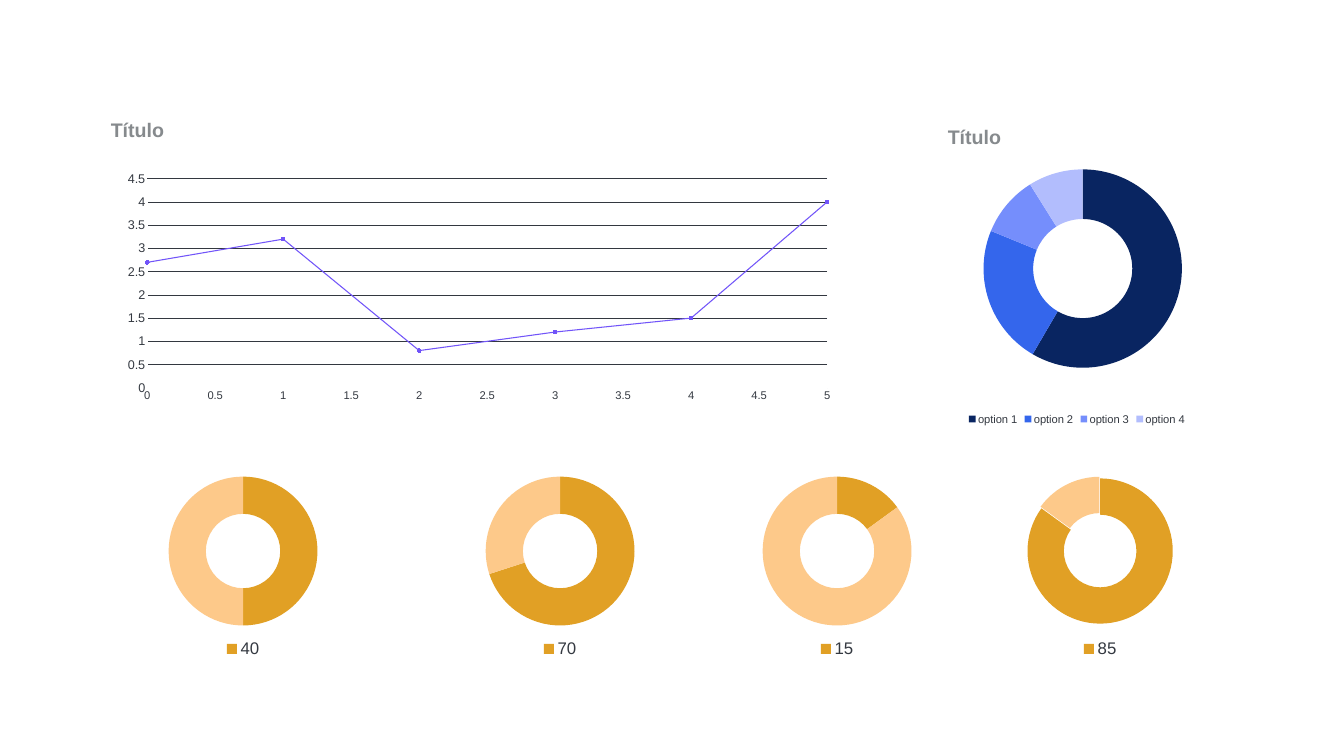
from dataclasses import dataclass

from lxml.etree import SubElement
from pptx import Presentation
from pptx.chart.data import CategoryChartData, XyChartData
from pptx.dml.color import RGBColor
from pptx.enum.chart import XL_CHART_TYPE as ChartType
from pptx.enum.chart import XL_LEGEND_POSITION as LegendPosition
from pptx.enum.chart import XL_MARKER_STYLE as MarkerStyle
from pptx.enum.chart import XL_TICK_MARK as TickMark
from pptx.enum.text import MSO_ANCHOR as Anchor
from pptx.enum.text import MSO_AUTO_SIZE as AutoSize
from pptx.enum.text import PP_ALIGN as Align
from pptx.oxml import parse_xml
from pptx.oxml.ns import nsdecls, qn
from pptx.util import Cm, Pt


@dataclass(frozen=True)
class Theme:
    font: str = "Arial"
    white: str = "FFFFFF"
    heading: str = "868A8D"
    label: str = "343941"
    grid: str = "333840"
    curve: str = "7154F9"
    blues: tuple = ("092561", "3466EC", "758EFC", "B2BDFD")
    golds: tuple = ("E1A025", "FDC98A")
    heading_size: int = 28
    gauge_size: int = 24
    value_size: int = 18
    small_size: int = 16


THEME = Theme()


def set_attributes(target, values):
    for name, value in values.items():
        setattr(target, name, value)


def format_font(font, size, color, bold=False):
    set_attributes(font, {"name": THEME.font, "size": Pt(size), "bold": bold})
    font.color.rgb = RGBColor.from_string(color)


def format_line(line, color, width=0.75):
    line.color.rgb = RGBColor.from_string(color)
    line.width = Pt(width)


def format_fill(fill, color):
    fill.solid()
    fill.fore_color.rgb = RGBColor.from_string(color)


def format_heading(shape, left, top):
    box = {"left": Cm(left), "top": Cm(top), "width": Cm(6.2), "height": Cm(1.57)}
    set_attributes(shape, box)
    frame = shape.text_frame
    frame.text = "Título"
    set_attributes(frame, {"word_wrap": True, "vertical_anchor": Anchor.MIDDLE,
                           "auto_size": AutoSize.SHAPE_TO_FIT_TEXT})
    paragraph = frame.paragraphs[0]
    set_attributes(paragraph, {"alignment": Align.JUSTIFY, "line_spacing": 1.2})
    format_font(paragraph.runs[0].font, THEME.heading_size, THEME.heading, True)


def add_chart(slide, kind, box, data):
    chart = slide.shapes.add_chart(kind, *map(Cm, box), data).chart
    set_attributes(chart, {"has_title": False, "has_legend": False})
    format_font(chart.font, THEME.value_size, THEME.label)
    return chart


def place_plot(chart, x, y, width, height):
    area = chart.element.find(".//" + qn("c:plotArea"))
    for layout in area.findall(qn("c:layout")):
        area.remove(layout)
    layout = parse_xml(f"<c:layout {nsdecls('c')}><c:manualLayout/></c:layout>")
    values = {"layoutTarget": "inner", "xMode": "edge", "yMode": "edge",
              "x": x, "y": y, "w": width, "h": height}
    for name, value in values.items():
        SubElement(layout[0], qn(f"c:{name}")).set("val", str(value))
    area.insert(0, layout)


def format_axis(axis, size, grid, maximum):
    set_attributes(axis, {"major_tick_mark": TickMark.NONE, "minor_tick_mark": TickMark.NONE,
                          "minimum_scale": 0, "maximum_scale": maximum, "major_unit": 0.5,
                          "has_major_gridlines": True})
    set_attributes(axis.tick_labels, {"number_format": "General", "number_format_is_linked": False})
    format_font(axis.tick_labels.font, size, THEME.label)
    format_line(axis.format.line, THEME.white)
    format_line(axis.major_gridlines.format.line, grid)


def add_curve(slide, box, values):
    data = XyChartData()
    points = data.add_series("Series 1")
    for x, y in enumerate(values):
        points.add_data_point(x, y)
    chart = add_chart(slide, ChartType.XY_SCATTER_SMOOTH, box, data)
    chart.plots[0].vary_by_categories = False
    place_plot(chart, 0.096, 0.097, 0.891, 0.696)
    format_axis(chart.category_axis, THEME.small_size, THEME.white, 5)
    format_axis(chart.value_axis, THEME.value_size, THEME.grid, 4.5)

    series = chart.plots[0].series[0]
    series.smooth = True
    format_line(series.format.line, THEME.curve, 1.5)
    set_attributes(series.marker, {"style": MarkerStyle.CIRCLE, "size": 5})
    format_fill(series.marker.format.fill, THEME.curve)
    format_line(series.marker.format.line, THEME.curve)


def add_doughnut(slide, box, shares, colors, legend_size):
    data = CategoryChartData()
    data.categories = list(shares)
    data.add_series("Series 1", list(shares.values()))
    chart = add_chart(slide, ChartType.DOUGHNUT, box, data)
    chart.plots[0].vary_by_categories = True
    for index, color in enumerate(colors):
        point = chart.plots[0].series[0].points[index]
        format_fill(point.format.fill, color)
        point.format.line.fill.background()
    chart.has_legend = True
    set_attributes(chart.legend, {"position": LegendPosition.BOTTOM, "include_in_layout": False})
    format_font(chart.legend.font, legend_size, THEME.label)
    return chart


def add_gauge(slide, box, label, share, explosion):
    shares = {label: share, "two": 100 - share}
    chart = add_doughnut(slide, box, shares, THEME.golds, THEME.gauge_size)
    hidden = parse_xml(f'<c:legendEntry {nsdecls("c")}><c:idx val="1"/>'
                       '<c:delete val="1"/></c:legendEntry>')
    chart.element.find(".//" + qn("c:legendPos")).addnext(hidden)
    if explosion:
        rest = chart.element.findall(".//" + qn("c:dPt"))[1]
        offset = parse_xml(f'<c:explosion {nsdecls("c")} val="{explosion}"/>')
        rest.find(qn("c:spPr")).addprevious(offset)


def main():
    presentation = Presentation()
    set_attributes(presentation, {"slide_width": Cm(67.74), "slide_height": Cm(38.1)})
    slide = presentation.slides.add_slide(presentation.slide_layouts[5])

    add_curve(slide, (3.73, 7.54, 38.46, 15.14), [2.7, 3.2, 0.8, 1.2, 1.5, 4])
    options = {f"option {number}": share for number, share in enumerate([59, 23, 10, 9], 1)}
    doughnut = add_doughnut(slide, (47.52, 7.62, 13.51, 13.92), options,
                            THEME.blues, THEME.small_size)
    place_plot(doughnut, 0.152, 0.048, 0.74, 0.754)

    gauges = [(6.6, 11.3, "40", 50, 0), (22.58, 11.3, "70", 70, 0),
              (37.44, 9.5, "15", 15, 0), (49.86, 11.18, "85", 85, 5)]
    for left, width, label, share, explosion in gauges:
        add_gauge(slide, (left, 23.67, width, 9.68), label, share, explosion)

    format_heading(slide.shapes.title, 5.33, 5.61)
    format_heading(slide.shapes.add_textbox(0, 0, 0, 0), 47.52, 5.99)
    presentation.save("out.pptx")


if __name__ == "__main__":
    main()
